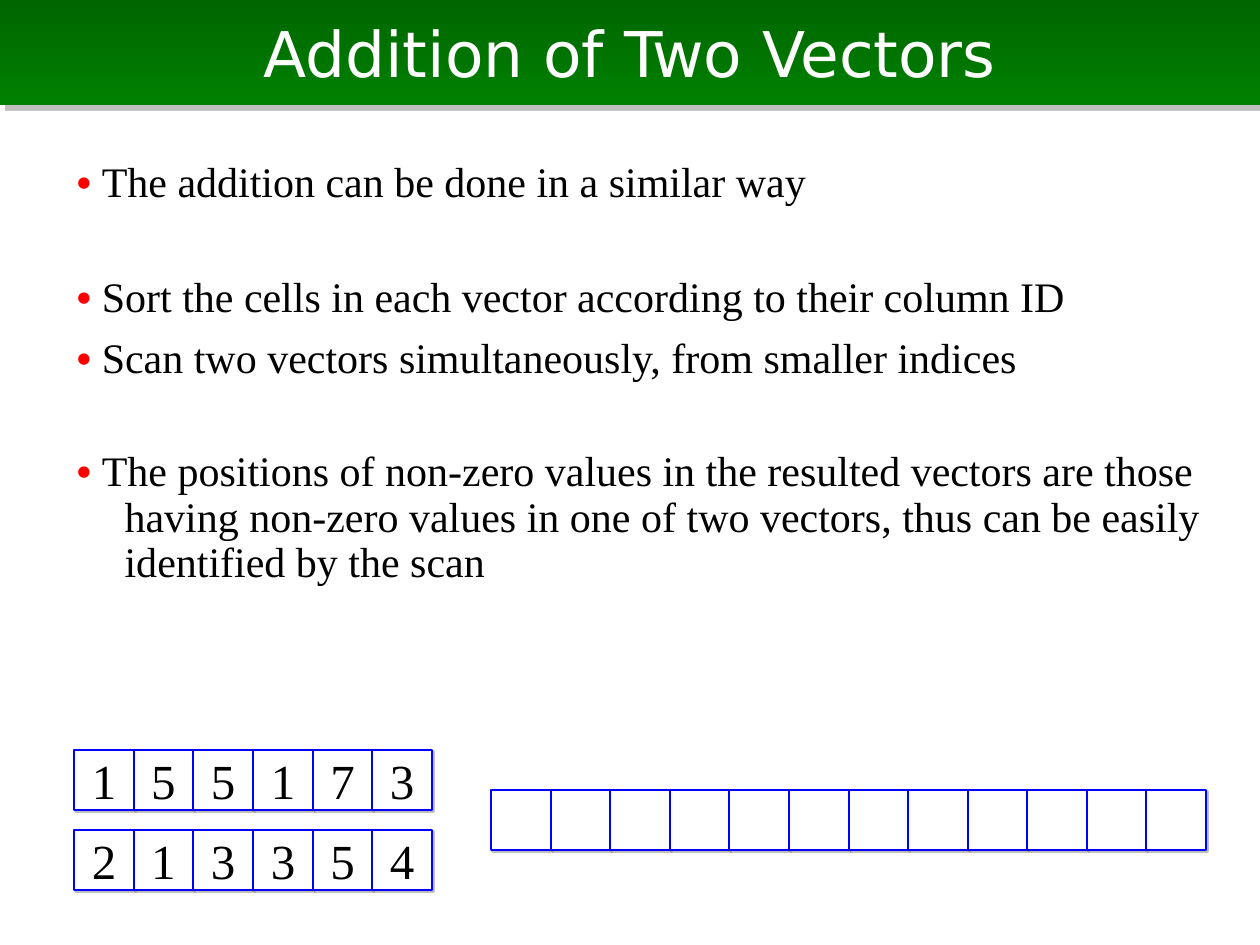
from dataclasses import dataclass

from lxml import etree
from pptx import Presentation
from pptx.dml.color import RGBColor
from pptx.enum.shapes import MSO_SHAPE
from pptx.enum.text import MSO_ANCHOR, MSO_AUTO_SIZE, PP_ALIGN
from pptx.oxml.ns import qn
from pptx.util import Emu, Pt

RECTANGLE = MSO_SHAPE.RECTANGLE
MIDDLE, TOP = MSO_ANCHOR.MIDDLE, MSO_ANCHOR.TOP
CENTER, LEFT = PP_ALIGN.CENTER, PP_ALIGN.LEFT
NO_AUTOFIT = MSO_AUTO_SIZE.NONE

PX_PER_INCH = 126
SERIF, SANS = "Times New Roman", "DejaVu Sans"
BLACK, WHITE, RED, BLUE, GRAY = "000000", "FFFFFF", "FF0000", "0000FF", "808080"
DARK_GREEN, GREEN = "006600", "008000"
CELL_HEIGHT = 60
HANGING_INDENT = 48


@dataclass
class Point:
    text: str
    space_before: float
    line_spacing: float


@dataclass
class Vector:
    left: int
    top: int
    width: int
    values: list[str]


POINTS = [
    Point("The addition can be done in a similar way", 5.5, 0.9),
    Point("Sort the cells in each vector according to their column ID", 36.7, 1.0),
    Point("Scan two vectors simultaneously, from smaller indices", 6, 1.0),
    Point("The positions of non-zero values in the resulted vectors are those "
          "having non-zero values in one of two vectors, thus can be easily "
          "identified by the scan", 39, 0.9),
]
VECTORS = [
    Vector(74, 750, 358, list("155173")),
    Vector(74, 830, 358, list("213354")),
    Vector(491, 790, 715, [""] * 12),
]


def px(length: int) -> Emu:
    return Emu(round(length * 914400 / PX_PER_INCH))


def color(value: str) -> RGBColor:
    return RGBColor.from_string(value)


def place(shape, left: int, top: int, width: int, height: int) -> None:
    shape.left, shape.top = px(left), px(top)
    shape.width, shape.height = px(width), px(height)


def style_font(font, face: str, size: int, fill: str) -> None:
    font.name, font.size = face, Pt(size)
    font.color.rgb = color(fill)


def add_shadow(shape, distance: float) -> None:
    """Hard half-transparent shadow to the lower right."""
    shape.shadow.inherit = False
    effects = shape._element.spPr.find(qn("a:effectLst"))
    outer = etree.SubElement(effects, qn("a:outerShdw"), blurRad="0",
                             dist=str(Pt(distance)), dir="2700000", algn="ctr",
                             rotWithShape="0")
    tint = etree.SubElement(outer, qn("a:srgbClr"), val=GRAY)
    etree.SubElement(tint, qn("a:alpha"), val="50000")


def fill_title(title) -> None:
    place(title, 0, 0, 1260, 105)
    title.fill.gradient()
    title.fill.gradient_angle = 270
    for stop, shade in zip(title.fill.gradient_stops, (DARK_GREEN, GREEN)):
        stop.color.rgb = color(shade)
    for stop, position in zip(title.fill.gradient_stops, (0, 1)):
        stop.position = position
    add_shadow(title, 4.2)
    frame = title.text_frame
    frame.text = "Addition of Two Vectors"
    frame.auto_size, frame.vertical_anchor = NO_AUTOFIT, MIDDLE
    frame.paragraphs[0].alignment = CENTER
    style_font(frame.paragraphs[0].runs[0].font, SANS, 36, WHITE)


def fill_body(body, points: list[Point]) -> None:
    place(body, 64, 155, 1150, 595)
    frame = body.text_frame
    frame.auto_size, frame.vertical_anchor = NO_AUTOFIT, TOP
    for index, point in enumerate(points):
        paragraph = frame.paragraphs[0] if index == 0 else frame.add_paragraph()
        paragraph.alignment = LEFT
        paragraph.line_spacing = point.line_spacing
        paragraph.space_before = Pt(point.space_before)
        # The bullet is typed, so the first line starts right after it
        properties = paragraph._p.get_or_add_pPr()
        properties.set("marL", str(px(HANGING_INDENT)))
        properties.set("indent", str(-px(HANGING_INDENT)))
        etree.SubElement(properties, qn("a:buNone"))
        for text, fill, bold in (("• ", RED, True), (point.text, BLACK, False)):
            run = paragraph.add_run()
            run.text = text
            style_font(run.font, SERIF, 24, fill)
            run.font.bold = bold


def draw_vector(shapes, vector: Vector) -> None:
    count = len(vector.values)
    edges = [vector.left + round(vector.width * i / count) for i in range(count + 1)]
    for value, left, right in zip(vector.values, edges, edges[1:]):
        cell = shapes.add_shape(RECTANGLE, px(left), px(vector.top),
                                px(right - left), px(CELL_HEIGHT))
        cell.fill.solid()
        cell.fill.fore_color.rgb = color(WHITE)
        cell.line.color.rgb = color(BLUE)
        cell.line.width = Pt(1.5)
        add_shadow(cell, 1.4)
        if value:
            frame = cell.text_frame
            frame.text = value
            frame.word_wrap, frame.vertical_anchor = False, MIDDLE
            frame.paragraphs[0].alignment = CENTER
            style_font(frame.paragraphs[0].runs[0].font, SERIF, 28, BLACK)


def main() -> None:
    deck = Presentation()
    deck.slide_width, deck.slide_height = px(1260), px(945)
    slide = deck.slides.add_slide(deck.slide_layouts[1])

    # Title bar and explanation
    fill_title(slide.shapes.title)
    fill_body(slide.placeholders[1], POINTS)

    # Two operands and the empty result
    for vector in VECTORS:
        draw_vector(slide.shapes, vector)

    deck.save("out.pptx")


if __name__ == "__main__":
    main()
